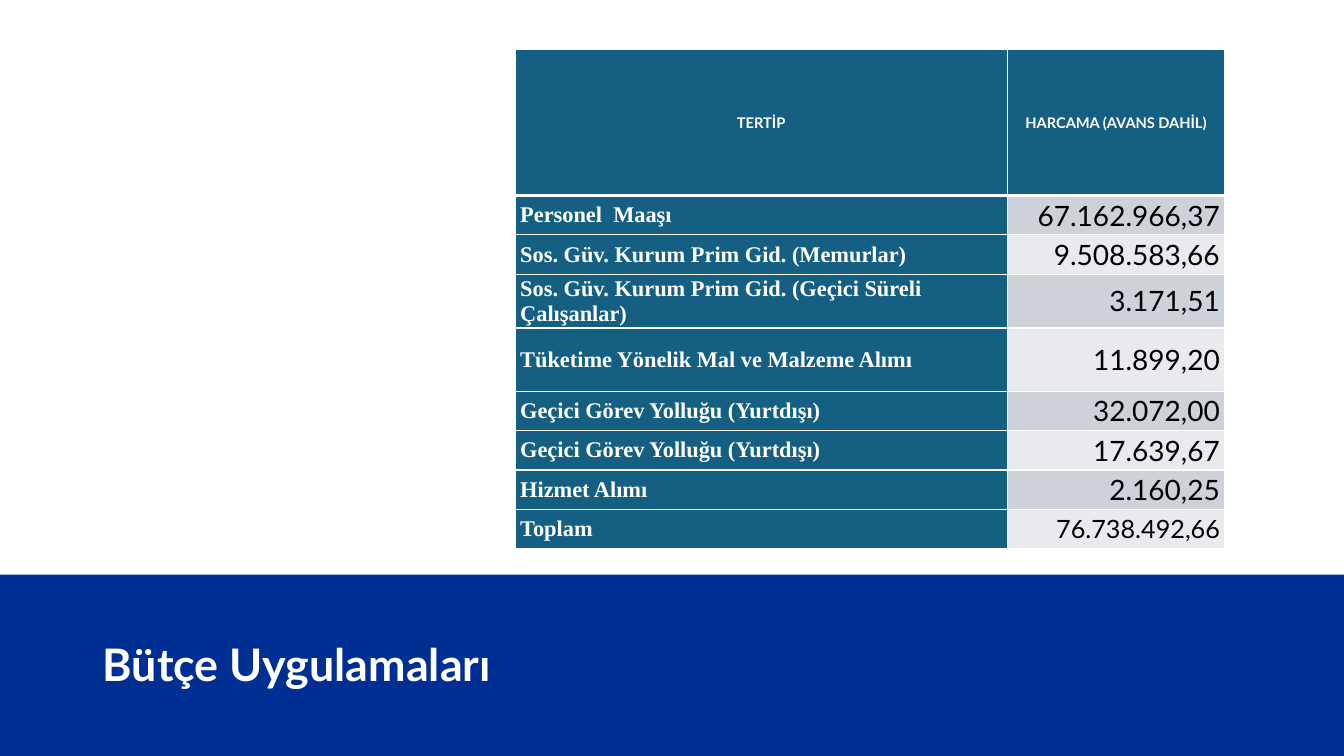
from dataclasses import dataclass

from lxml.etree import SubElement
from pptx import Presentation
from pptx.dml.color import RGBColor as Color
from pptx.enum.shapes import MSO_SHAPE as Shape
from pptx.enum.text import MSO_ANCHOR as Anchor, PP_ALIGN as Align
from pptx.oxml.ns import qn
from pptx.util import Inches, Pt


@dataclass(frozen=True)
class Theme:
    """Colours, fonts and type sizes of the slide."""
    white: str = "FFFFFF"
    black: str = "000000"
    band: str = "002F94"
    teal: str = "156082"
    stripes: tuple = ("CCD2D8", "E8EAED")
    sans: str = "Lato"
    serif: str = "Times New Roman"
    title_size: float = 32
    header_size: float = 10.5
    label_size: float = 16
    amount_size: float = 20
    total_size: float = 18


THEME = Theme()
HEADERS = ("TERTİP", "HARCAMA (AVANS DAHİL)")
EXPENSES = (
    ("Personel  Maaşı", "67.162.966,37"),
    ("Sos. Güv. Kurum Prim Gid. (Memurlar)", "9.508.583,66"),
    ("Sos. Güv. Kurum Prim Gid. (Geçici Süreli Çalışanlar)", "3.171,51"),
    ("Tüketime Yönelik Mal ve Malzeme Alımı", "11.899,20"),
    ("Geçici Görev Yolluğu (Yurtdışı)", "32.072,00"),
    ("Geçici Görev Yolluğu (Yurtdışı)", "17.639,67"),
    ("Hizmet Alımı", "2.160,25"),
    ("Toplam", "76.738.492,66"),
)
COLUMN_WIDTHS = (4.88, 2.16)
HEADER_HEIGHT, ROW_HEIGHT, TALL_HEIGHT = 1.45, 0.39, 0.63
TALL_ROW = 4


def style_text(para, font, size, color, bold, align=Align.LEFT):
    """Format every run of a paragraph."""
    para.alignment = align
    for span in para.runs:
        span.font.name = font
        span.font.size = Pt(size)
        span.font.bold = bold
        span.font.color.rgb = Color.from_string(color)


def set_borders(cell, top, bottom):
    """Give a cell white borders, with top and bottom widths in points."""
    properties = cell._tc.get_or_add_tcPr()
    for side, width in (("L", 1), ("R", 1), ("T", top), ("B", bottom)):
        line = SubElement(properties, qn(f"a:ln{side}"), w=str(Pt(width)))
        fill = SubElement(line, qn("a:solidFill"))
        SubElement(fill, qn("a:srgbClr"), val=THEME.white)


def fill_cell(cell, text, fill, row, **style):
    """Write one table cell with its fill, borders and text style."""
    set_borders(cell, top=3 if row == 1 else 1, bottom=3 if row == 0 else 1)
    cell.fill.solid()
    cell.fill.fore_color.rgb = Color.from_string(fill)
    cell.margin_left = cell.margin_right = Inches(0.05)
    cell.margin_top = cell.margin_bottom = 0
    cell.vertical_anchor = Anchor.MIDDLE
    cell.text_frame.text = text
    style_text(cell.text_frame.paragraphs[0], **style)


def add_title_band(page, left, top, width, height):
    """Draw the blue band with the slide title."""
    band = page.shapes.add_shape(
        Shape.RECTANGLE, Inches(left), Inches(top), Inches(width), Inches(height))
    band.shadow.inherit = False
    band.fill.solid()
    band.fill.fore_color.rgb = Color.from_string(THEME.band)
    band.line.fill.background()

    box = page.shapes.add_textbox(
        Inches(left + 0.92), Inches(top + 0.42), Inches(7.51), Inches(1))
    frame = box.text_frame
    frame.word_wrap = True
    frame.vertical_anchor = Anchor.MIDDLE
    frame.text = "Bütçe Uygulamaları"
    para = frame.paragraphs[0]
    para.line_spacing = 0.9
    para.space_after = Pt(6)
    style_text(para, THEME.sans, THEME.title_size, THEME.white, True)


def add_expense_table(page, left, top, width, height):
    """Build the table of budget items and spending."""
    table = page.shapes.add_table(
        len(EXPENSES) + 1, len(HEADERS),
        Inches(left), Inches(top), Inches(width), Inches(height)).table
    for column, column_width in zip(table.columns, COLUMN_WIDTHS):
        column.width = Inches(column_width)
    for row in table.rows:
        row.height = Inches(ROW_HEIGHT)
    table.rows[0].height = Inches(HEADER_HEIGHT)
    table.rows[TALL_ROW].height = Inches(TALL_HEIGHT)

    for column, header in enumerate(HEADERS):
        fill_cell(table.cell(0, column), header, THEME.teal, 0,
                  font=THEME.sans, size=THEME.header_size,
                  color=THEME.white, bold=True, align=Align.CENTER)
    for row, (label, amount) in enumerate(EXPENSES, start=1):
        is_total = row == len(EXPENSES)
        fill_cell(table.cell(row, 0), label, THEME.teal, row,
                  font=THEME.serif, size=THEME.label_size,
                  color=THEME.white, bold=True)
        fill_cell(table.cell(row, 1), amount, THEME.stripes[(row - 1) % 2], row,
                  font=THEME.sans,
                  size=THEME.total_size if is_total else THEME.amount_size,
                  color=THEME.black, bold=False, align=Align.RIGHT)


def main():
    """Create the deck and save it."""
    deck = Presentation()
    deck.slide_width, deck.slide_height = Inches(13.33), Inches(7.5)
    page = deck.slides.add_slide(deck.slide_layouts[6])
    add_title_band(page, 0, 5.7, 13.33, 1.8)
    add_expense_table(page, 5.11, 0.49, 7.04, 4.97)
    deck.save("out.pptx")


if __name__ == "__main__":
    main()
